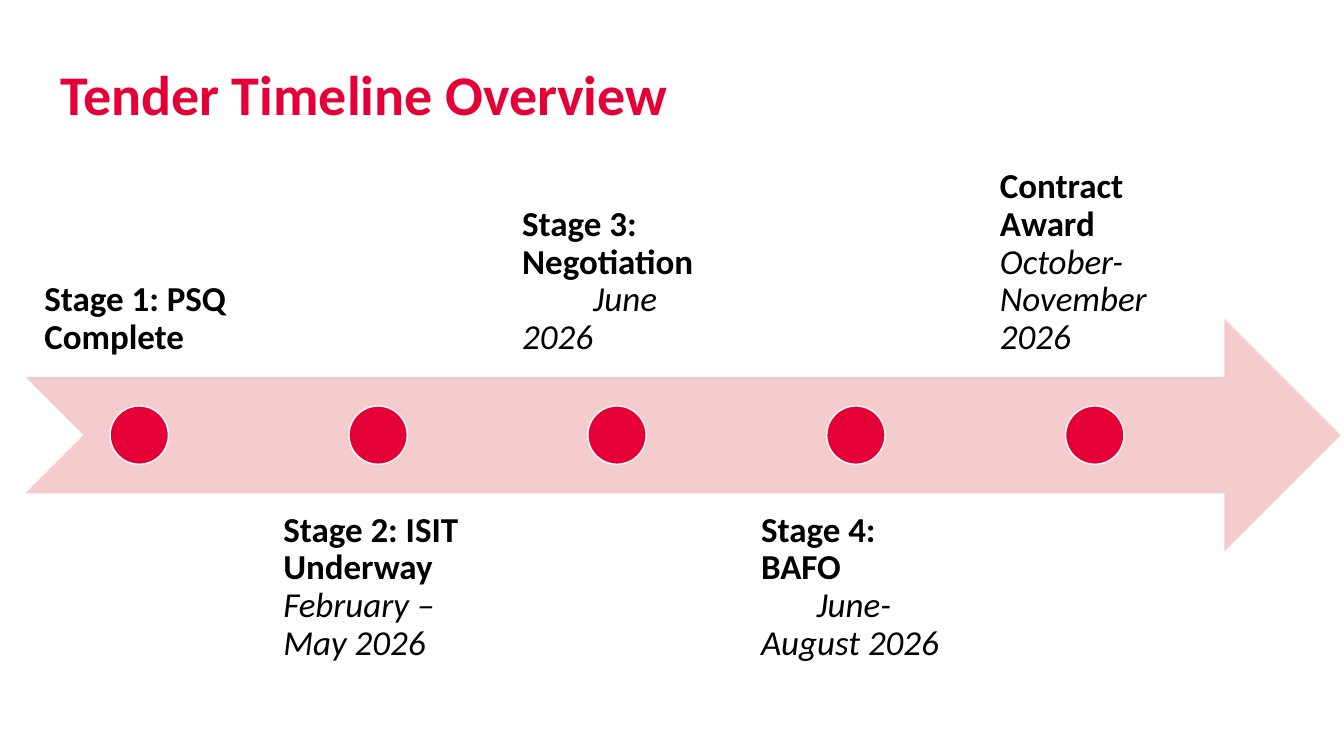
"""Build the tender timeline slide: a notched arrow with five stages."""
from pptx import Presentation
from pptx.dml.color import RGBColor
from pptx.enum.shapes import MSO_SHAPE
from pptx.enum.text import MSO_ANCHOR, MSO_AUTO_SIZE, PP_ALIGN
from pptx.util import Cm, Pt

ARROW, DOT = MSO_SHAPE.NOTCHED_RIGHT_ARROW, MSO_SHAPE.OVAL
TOP, MIDDLE, BOTTOM = MSO_ANCHOR.TOP, MSO_ANCHOR.MIDDLE, MSO_ANCHOR.BOTTOM
LEFT, NO_FIT = PP_ALIGN.LEFT, MSO_AUTO_SIZE.NONE

TITLE = "Tender Timeline Overview"
STAGES = [
    ("Stage 1: PSQ Complete", None, 0),
    ("Stage 2: ISIT Underway", "February – May 2026", 0),
    ("Stage 3: Negotiation", "June 2026", 1.79),
    ("Stage 4: BAFO", "June-August 2026", 1.4),
    ("Contract Award", "October-November 2026", 0),
]
RED, PINK, WHITE, BLACK = "E40037", "F5CCCE", "FFFFFF", "000000"
FONT = "Calibri"
ARROW_X, ARROW_Y, ARROW_W, BAND_H = 0.64, 8.03, 33.15, 5.87
STEP, LABEL_W, DOT_D = 6.02, 5.74, 1.47
ABOVE_Y, BELOW_Y = 3.61, 12.42


def rgb(value):
    return RGBColor.from_string(value)


def add_run(p, text, size, color, bold=False, italic=False):
    r = p.add_run()
    r.text = text
    r.font.name, r.font.size = FONT, Pt(size)
    r.font.bold, r.font.italic = bold, italic
    r.font.color.rgb = rgb(color)


def set_frame(tf, anchor, inset):
    tf.word_wrap, tf.auto_size = True, NO_FIT
    tf.vertical_anchor = anchor
    tf.margin_left = tf.margin_right = Cm(inset)
    tf.margin_top = tf.margin_bottom = Cm(inset)


def add_shape(s, kind, x, y, w, h, fill, line=None):
    sp = s.shapes.add_shape(kind, Cm(x), Cm(y), Cm(w), Cm(h))
    sp.shadow.inherit = False
    sp.fill.solid()
    sp.fill.fore_color.rgb = rgb(fill)
    if line:
        sp.line.color.rgb = rgb(line)
        sp.line.width = Pt(1)
    else:
        sp.line.fill.background()


def add_title(s):
    sp = s.shapes.title
    sp.left, sp.top, sp.width, sp.height = Cm(1.52), Cm(1.45), Cm(29.39), Cm(1.8)
    set_frame(sp.text_frame, MIDDLE, 0)
    p = sp.text_frame.paragraphs[0]
    p.alignment = LEFT
    add_run(p, TITLE, 40, RED, bold=True)


def add_label(s, x, y, anchor, name, date, indent):
    sp = s.shapes.add_textbox(Cm(x), Cm(y), Cm(LABEL_W), Cm(BAND_H))
    tf = sp.text_frame
    set_frame(tf, anchor, 0.48)
    p = tf.paragraphs[0]
    p.line_spacing = 0.9
    add_run(p, name, 25, BLACK, bold=True)
    if date:
        p = tf.add_paragraph()
        p.line_spacing = 0.9
        p._p.get_or_add_pPr().set("indent", str(Cm(indent)))
        add_run(p, date, 25, BLACK, italic=True)


def main():
    prs = Presentation()
    prs.slide_width, prs.slide_height = Cm(33.87), Cm(19.05)
    s = prs.slides.add_slide(prs.slide_layouts[5])
    add_title(s)
    add_shape(s, ARROW, ARROW_X, ARROW_Y, ARROW_W, BAND_H, PINK)
    dot_y = ARROW_Y + (BAND_H - DOT_D) / 2
    for i, (name, date, indent) in enumerate(STAGES):
        x = ARROW_X + i * STEP
        y, anchor = (BELOW_Y, TOP) if i % 2 else (ABOVE_Y, BOTTOM)
        add_label(s, x, y, anchor, name, date, indent)
        add_shape(s, DOT, x + (LABEL_W - DOT_D) / 2, dot_y, DOT_D, DOT_D, RED, WHITE)
    prs.save("out.pptx")


if __name__ == "__main__":
    main()
